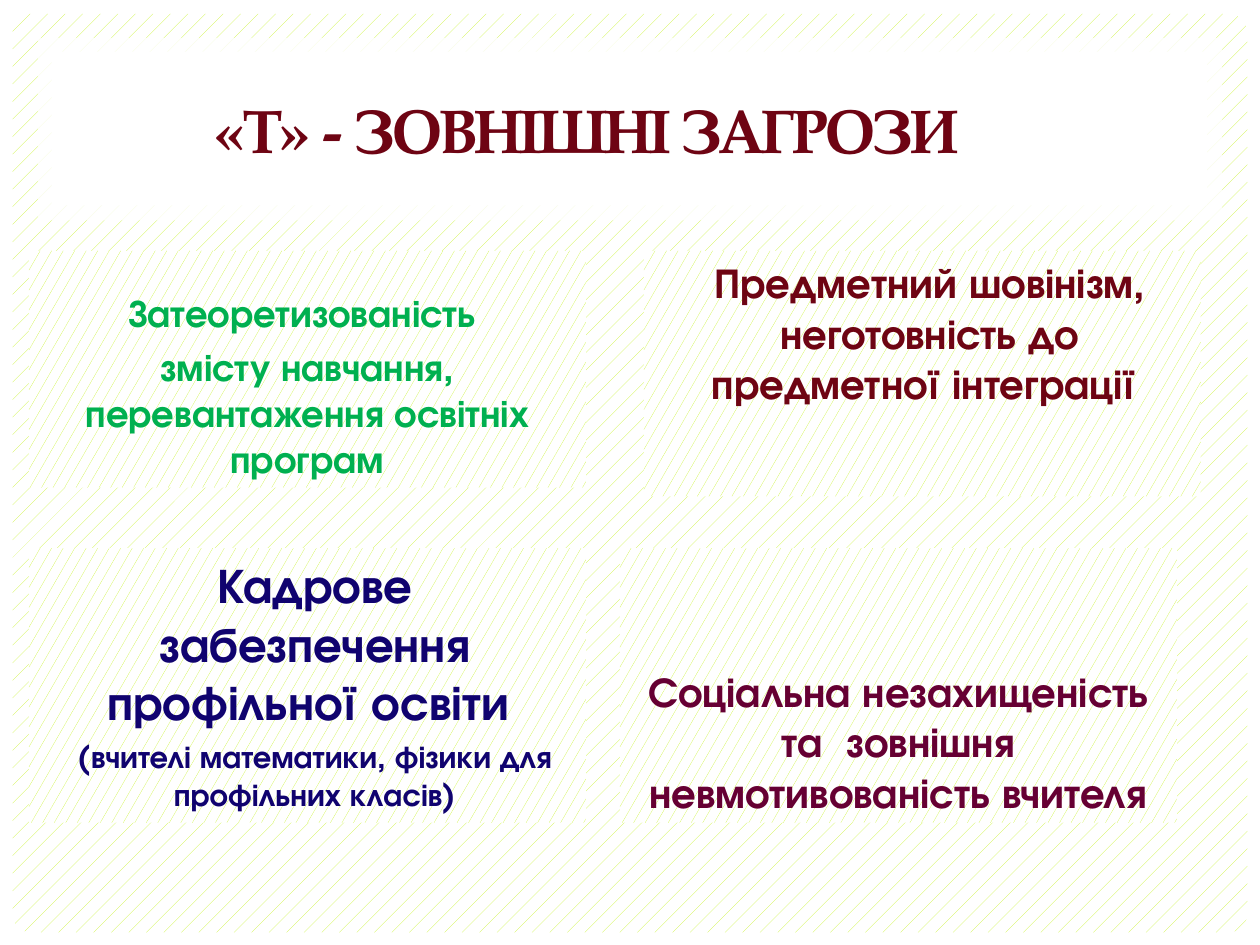
from lxml import etree
from pptx import Presentation
from pptx import util as u
from pptx.dml import color
from pptx.enum import dml, shapes, text
from pptx.oxml import ns

WIDTH, HEIGHT = 10, 7.5
LIME, WHITE, MAROON = "CAF430", "FFFFFF", "6E0413"
BODY_FONT, TITLE_FONT = "TeX Gyre Adventor", "TeX Gyre Pagella"
LEFT, RIGHT = 0.23, 5.11
TOP, BOTTOM = 1.99, 4.35
PANEL_WIDTH = 4.42


def rgb(value):
    return color.RGBColor.from_string(value)


def set_pattern(fill, pattern):
    fill.patterned()
    fill.pattern = pattern
    fill.fore_color.rgb = rgb(LIME)
    fill.back_color.rgb = rgb(WHITE)


def add_panel(slide, box, pattern=None, alpha=None, kind=shapes.MSO_SHAPE.RECTANGLE):
    panel = slide.shapes.add_shape(kind, *map(u.Inches, box))
    panel.shadow.inherit = False
    panel.line.fill.background()
    if pattern is not None:
        set_pattern(panel.fill, pattern)
    else:
        panel.fill.solid()
        panel.fill.fore_color.rgb = rgb(WHITE)
    if alpha:
        white = panel.element.spPr.find(".//" + ns.qn("a:srgbClr"))
        etree.SubElement(white, ns.qn("a:alpha"), val=str(alpha * 1000))
    return panel


def format_paragraph(paragraph, words, size, font, ink):
    paragraph.text = words
    paragraph.alignment = text.PP_ALIGN.CENTER
    for run in paragraph.runs:
        run.font.size = u.Pt(size)
        run.font.name = font
        run.font.bold = True
        run.font.color.rgb = rgb(ink)


def add_threat(slide, box, ink, lines, anchor, indent=0):
    frame = add_panel(slide, box, dml.MSO_PATTERN.SMALL_CONFETTI).text_frame
    frame.word_wrap = True
    frame.vertical_anchor = anchor
    for index, (words, size) in enumerate(lines):
        paragraph = frame.add_paragraph() if index else frame.paragraphs[0]
        format_paragraph(paragraph, words, size, BODY_FONT, ink)
        paragraph.space_before = u.Pt(0.2 * size)
        if indent:
            paragraph._p.get_or_add_pPr().set("marL", str(u.Inches(indent)))


def add_backdrop(slide):
    add_panel(slide, (0, 0, WIDTH, HEIGHT))
    frame = add_panel(slide, (0.1, 0.11, 9.8, 7.29), dml.MSO_PATTERN.PERCENT_5,
                      kind=shapes.MSO_SHAPE.ROUNDED_RECTANGLE)
    frame.adjustments[0] = 0.02
    add_panel(slide, (0.3, 0.3, 9.4, 1.45), alpha=83)
    add_panel(slide, (0.41, 0.41, 9.17, 1.22))


def place_title(slide, words):
    title = slide.shapes.title
    title.left, title.top, title.width, title.height = map(u.Inches, (0.2, 0.45, 8.9, 1.14))
    title.text_frame.vertical_anchor = text.MSO_ANCHOR.MIDDLE
    heading = title.text_frame.paragraphs[0]
    format_paragraph(heading, words, 35, TITLE_FONT, MAROON)
    heading.runs[0].font._element.set("spc", "-100")
    title.element.getparent().append(title.element)


def main():
    deck = Presentation()
    deck.slide_width, deck.slide_height = u.Inches(WIDTH), u.Inches(HEIGHT)
    slide = deck.slides.add_slide(deck.slide_layouts[5])
    set_pattern(slide.background.fill, dml.MSO_PATTERN.PERCENT_5)
    add_backdrop(slide)
    place_title(slide, "«Т» - ЗОВНІШНІ ЗАГРОЗИ")

    upper, lower = text.MSO_ANCHOR.TOP, text.MSO_ANCHOR.BOTTOM
    add_threat(slide, (LEFT, TOP, PANEL_WIDTH, 1.88), "00B050",
               [("Затеоретизованість ", 22),
                ("змісту навчання, перевантаження освітніх програм", 22)], lower)
    add_threat(slide, (4.92, BOTTOM, PANEL_WIDTH, 2.18), "660033",
               [("Соціальна незахищеність та  зовнішня невмотивованість вчителя", 24)], lower)
    add_threat(slide, (RIGHT, TOP, PANEL_WIDTH, 1.95), MAROON,
               [("Предметний шовінізм, неготовність до предметної інтеграції ", 24)], upper, 0.12)
    add_threat(slide, (LEFT, BOTTOM, PANEL_WIDTH, 2.18), "10036F",
               [("Кадрове забезпечення профільної освіти ", 28),
                ("(вчителі математики, фізики для профільних класів)", 18)], upper, 0.12)
    deck.save("out.pptx")


if __name__ == "__main__":
    main()
